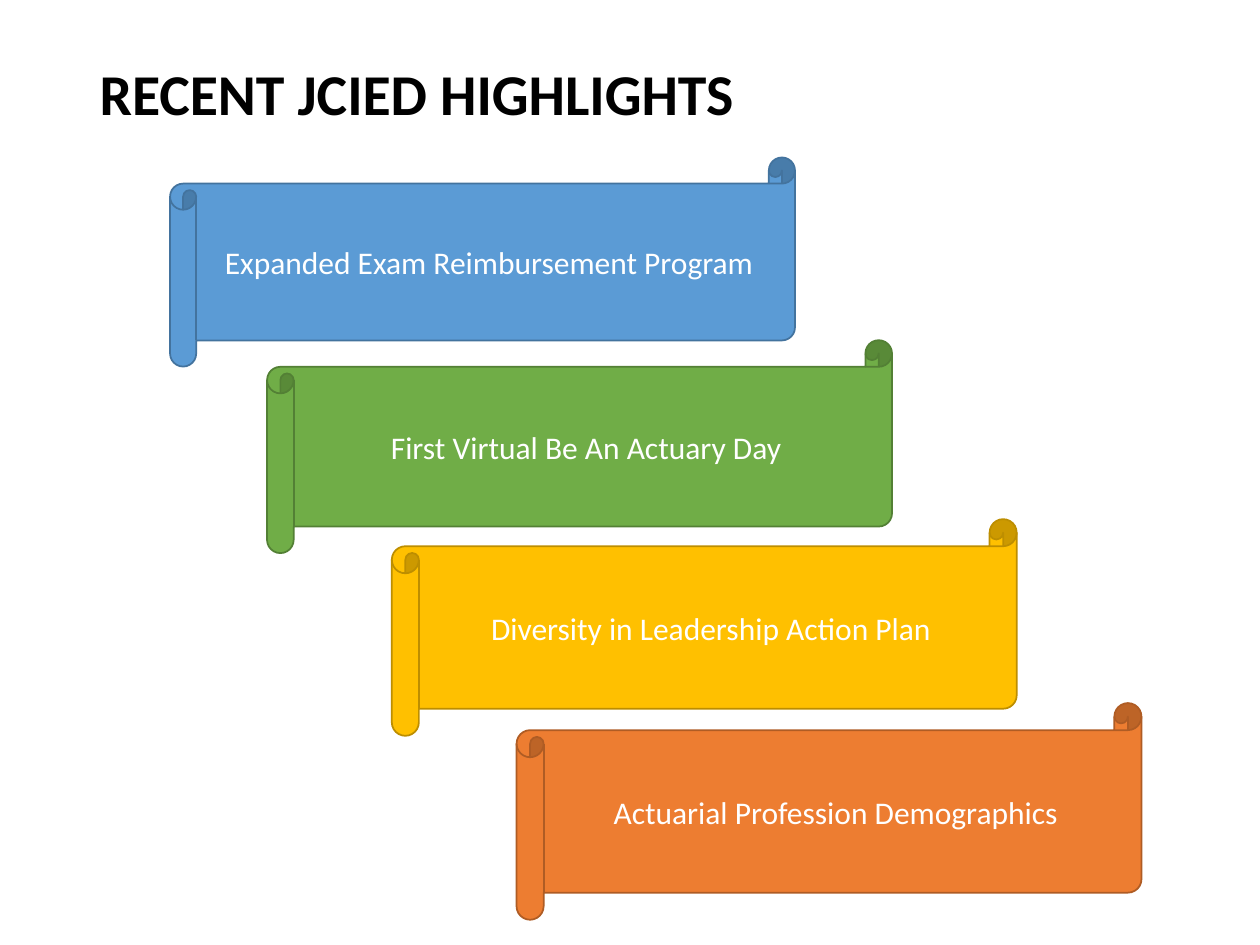
from dataclasses import dataclass

from pptx import Presentation
from pptx import util as u
from pptx.dml.color import RGBColor
from pptx.enum import shapes, text

PX = u.Inches(1) // 100
SCROLL_WIDTH = 496
FONT = "Calibri"

BLACK = RGBColor(0x00, 0x00, 0x00)
WHITE = RGBColor(0xFF, 0xFF, 0xFF)
BLUE = RGBColor(0x5B, 0x9B, 0xD5)
DARK_BLUE = RGBColor(0x43, 0x73, 0x9E)
GREEN = RGBColor(0x70, 0xAD, 0x47)
DARK_GREEN = RGBColor(0x53, 0x80, 0x35)
GOLD = RGBColor(0xFF, 0xC0, 0x00)
DARK_GOLD = RGBColor(0xBD, 0x8E, 0x00)
ORANGE = RGBColor(0xED, 0x7D, 0x31)
DARK_ORANGE = RGBColor(0xAF, 0x5C, 0x24)


@dataclass(frozen=True)
class Highlight:
    wording: str
    left: int
    top: int
    height: int
    fill: RGBColor
    outline: RGBColor


HIGHLIGHTS = (
    Highlight("Expanded Exam Reimbursement Program", 135, 125, 166, BLUE, DARK_BLUE),
    Highlight("First Virtual Be An Actuary Day", 212, 270, 169, GREEN, DARK_GREEN),
    Highlight("Diversity in Leadership Action Plan", 311, 412, 172, GOLD, DARK_GOLD),
    Highlight("Actuarial Profession Demographics", 410, 558, 172, ORANGE, DARK_ORANGE),
)


def write(shape, wording: str, align, color: RGBColor, **font_format) -> None:
    frame = shape.text_frame
    frame.word_wrap = True
    frame.vertical_anchor = text.MSO_ANCHOR.MIDDLE
    paragraph = frame.paragraphs[0]
    paragraph.alignment = align
    run = paragraph.add_run()
    run.text = wording
    run.font.color.rgb = color
    for attribute, value in {"name": FONT, **font_format}.items():
        setattr(run.font, attribute, value)


def place_title(slide, wording: str) -> None:
    title = slide.shapes.title
    place = {"left": 69, "top": 4, "width": 862, "height": 145}
    for attribute, value in place.items():
        setattr(title, attribute, value * PX)
    write(title, wording, text.PP_ALIGN.LEFT, BLACK, size=u.Pt(33), bold=True)
    title.text_frame.auto_size = text.MSO_AUTO_SIZE.NONE
    title.text_frame.paragraphs[0].line_spacing = 0.9


def draw_scroll(slide, highlight: Highlight) -> None:
    scroll = slide.shapes.add_shape(
        shapes.MSO_SHAPE.HORIZONTAL_SCROLL,
        highlight.left * PX,
        highlight.top * PX,
        SCROLL_WIDTH * PX,
        highlight.height * PX,
    )
    scroll.shadow.inherit = False
    scroll.fill.solid()
    scroll.fill.fore_color.rgb = highlight.fill
    scroll.line.color.rgb = highlight.outline
    scroll.line.width = u.Pt(1)
    write(scroll, highlight.wording, text.PP_ALIGN.CENTER, WHITE, size=u.Pt(18))


def main() -> None:
    """Build the slide of recent highlights as a staircase of scrolls."""
    deck = Presentation()
    deck.slide_width, deck.slide_height = 1000 * PX, 750 * PX
    slide = deck.slides.add_slide(deck.slide_layouts[5])
    place_title(slide, "RECENT JCIED HIGHLIGHTS")
    for highlight in HIGHLIGHTS:
        draw_scroll(slide, highlight)
    deck.save("out.pptx")


if __name__ == "__main__":
    main()
